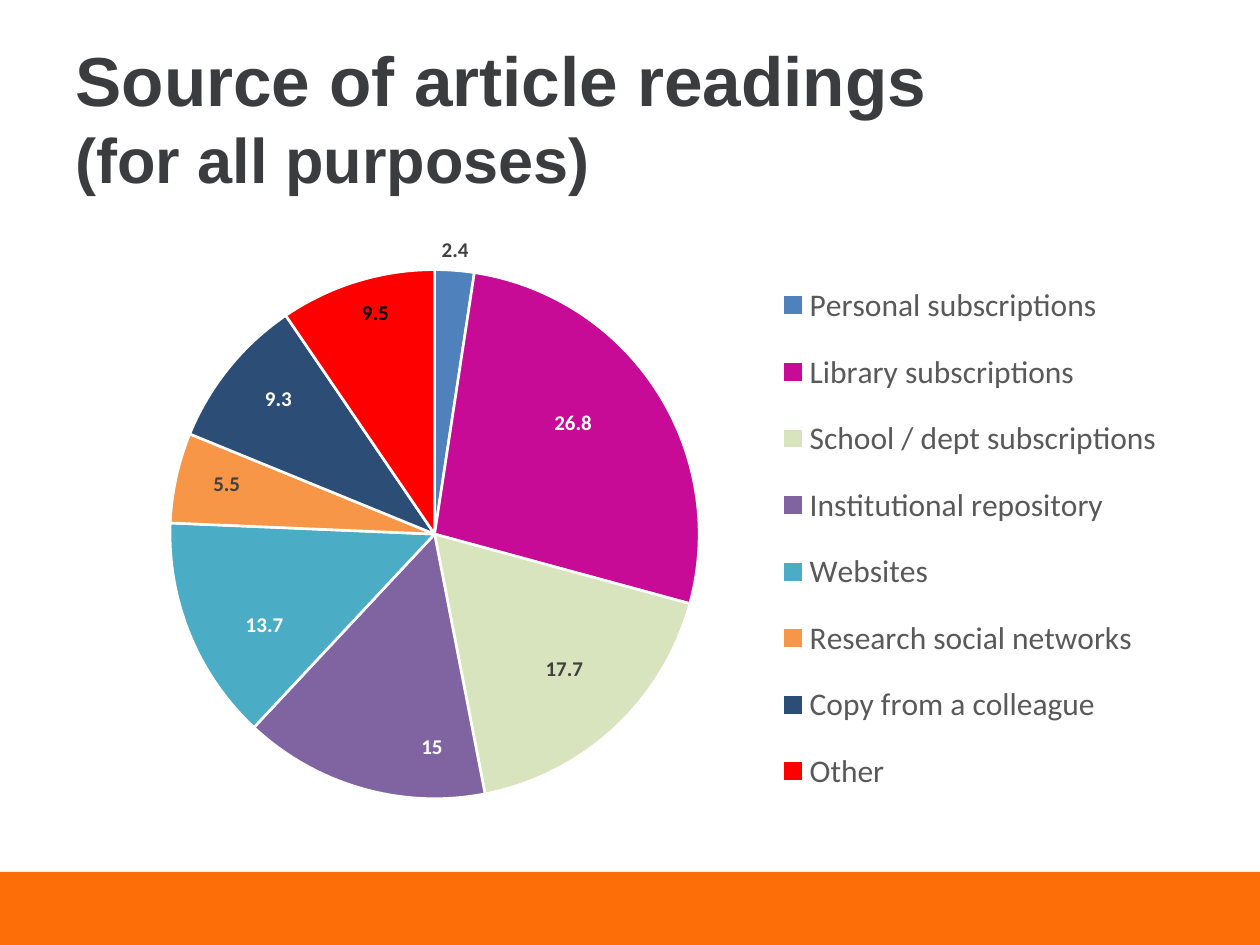
from itertools import accumulate
from math import cos, pi, sin

from lxml import etree
from pptx import Presentation
from pptx.chart.data import CategoryChartData
from pptx.dml.color import RGBColor
from pptx.enum.chart import XL_CHART_TYPE, XL_LABEL_POSITION, XL_LEGEND_POSITION
from pptx.enum.shapes import MSO_SHAPE
from pptx.enum.text import MSO_ANCHOR, PP_ALIGN
from pptx.oxml.ns import qn
from pptx.util import Inches, Pt

PIE = XL_CHART_TYPE.PIE
CENTER, OUTSIDE = XL_LABEL_POSITION.CENTER, XL_LABEL_POSITION.OUTSIDE_END
LEGEND_RIGHT = XL_LEGEND_POSITION.RIGHT
RECTANGLE = MSO_SHAPE.RECTANGLE
LEFT, MIDDLE = PP_ALIGN.LEFT, MSO_ANCHOR.MIDDLE

THEME = {
    "band": "FD6D08",
    "edge": "FFFFFF",
    "title": {"name": "Arial", "size": 39.6, "bold": True, "color": "3B3C3E"},
    "subtitle": {"name": "Arial", "size": 36, "bold": True, "color": "3B3C3E"},
    "chart": {"name": "Calibri", "size": 10, "color": "000000"},
    "legend": {"name": "Calibri", "size": 18, "color": "595959"},
    "label": {"name": "Calibri", "size": 12, "bold": True, "color": "404040"},
}
DARK, WHITE, BLACK = "404040", "FFFFFF", "000000"

# Category, value, slice colour, label colour, label place from the pie centre
SOURCES = [
    ("Personal subscriptions", 2.4, "4F81BD", DARK, None),
    ("Library subscriptions", 26.8, "C70B96", WHITE, (1.1, -0.88)),
    ("School / dept subscriptions", 17.7, "D7E4BD", DARK, (1.03, 1.07)),
    ("Institutional repository", 15, "8064A2", WHITE, (-0.02, 1.69)),
    ("Websites", 13.7, "4BACC6", WHITE, (-1.35, 0.72)),
    ("Research social networks", 5.5, "F79646", DARK, (-1.65, -0.4)),
    ("Copy from a colleague", 9.3, "2C4D75", WHITE, (-1.24, -1.07)),
    ("Other", 9.5, "FF0000", BLACK, (-0.47, -1.75)),
]
CHART_W, CHART_H = 9, 4.95
RADIUS = 2.1


def set_font(font, style):
    for key, value in style.items():
        if key == "color":
            font.color.rgb = RGBColor.from_string(value)
        else:
            setattr(font, key, Pt(value) if key == "size" else value)


def set_fill(fill, color):
    fill.solid()
    fill.fore_color.rgb = RGBColor.from_string(color)


def set_layout(parent, after, **values):
    """Give a chart part a manual layout in fractions of the chart."""
    for old in parent.findall(qn("c:layout")):
        parent.remove(old)
    layout = etree.Element(qn("c:layout"))
    manual = etree.SubElement(layout, qn("c:manualLayout"))
    for tag, value in values.items():
        text = value if isinstance(value, str) else f"{value:.4f}"
        etree.SubElement(manual, qn(f"c:{tag}")).set("val", text)
    if after is None:
        parent.insert(0, layout)
    else:
        after.addnext(layout)


def add_band(slide):
    sp = slide.shapes.add_shape(RECTANGLE, 0, Inches(6.92), Inches(10), Inches(0.58))
    sp.shadow.inherit = False
    set_fill(sp.fill, THEME["band"])
    sp.line.fill.background()


def add_title(slide, title, subtitle):
    sp = slide.shapes.title
    sp.left, sp.top = Inches(0.5), Inches(0.3)
    sp.width, sp.height = Inches(9), Inches(1.25)
    tf = sp.text_frame
    tf.vertical_anchor = MIDDLE
    p = tf.paragraphs[0]
    p.alignment = LEFT
    r = p.add_run()
    r.text = title
    set_font(r.font, THEME["title"])
    p.add_line_break()
    r = p.add_run()
    r.text = subtitle
    set_font(r.font, THEME["subtitle"])


def style_slices(series):
    values = [row[1] for row in SOURCES]
    total = sum(values)
    for i, (end, row) in enumerate(zip(accumulate(values), SOURCES)):
        _, value, color, label_color, place = row
        point = series.points[i]
        set_fill(point.format.fill, color)
        point.format.line.color.rgb = RGBColor.from_string(THEME["edge"])
        point.format.line.width = Pt(1.5)

        label = point.data_label
        set_font(label.font, {**THEME["label"], "color": label_color})
        label.position = CENTER if place else OUTSIDE
        if place:
            # Shift from the default spot, half a radius out along the slice
            angle = 2 * pi * (end - value / 2) / total
            dx = place[0] - RADIUS / 2 * sin(angle)
            dy = place[1] + RADIUS / 2 * cos(angle)
            d_lbl = next(e for e in series.points[0].data_label.font._element.iterancestors(qn("c:dLbls"))
                         ).findall(qn("c:dLbl"))[i]
            set_layout(d_lbl, d_lbl.find(qn("c:idx")), x=dx / CHART_W, y=dy / CHART_H)


def add_pie(slide):
    data = CategoryChartData()
    data.categories = [row[0] for row in SOURCES]
    data.add_series("Series 1", [row[1] for row in SOURCES])
    chart = slide.shapes.add_chart(PIE, Inches(0.5), Inches(1.75), Inches(CHART_W),
                                   Inches(CHART_H), data).chart
    chart.has_title = False
    set_font(chart.font, THEME["chart"])

    # Plot
    plot = chart.plots[0]
    plot.vary_by_categories = True
    plot_area = chart._chartSpace.find(".//" + qn("c:plotArea"))
    set_layout(plot_area, None, layoutTarget="inner", xMode="edge", yMode="edge",
               x=0.85 / CHART_W, y=0.39 / CHART_H,
               w=2 * RADIUS / CHART_W, h=2 * RADIUS / CHART_H)

    # Labels
    series = plot.series[0]
    labels = series.data_labels
    labels.show_value = True
    labels.position = OUTSIDE
    set_font(labels.font, THEME["label"])
    style_slices(series)

    # Legend
    chart.has_legend = True
    legend = chart.legend
    legend.position = LEGEND_RIGHT
    legend.include_in_layout = False
    set_font(legend.font, THEME["legend"])
    set_layout(legend._element, legend._element.find(qn("c:legendPos")),
               xMode="edge", yMode="edge", x=0.62, y=0.06, w=0.36, h=0.9)


def main():
    prs = Presentation()
    prs.slide_width, prs.slide_height = Inches(10), Inches(7.5)
    slide = prs.slides.add_slide(prs.slide_layouts[5])
    add_band(slide)
    add_title(slide, "Source of article readings ", "(for all purposes)")
    add_pie(slide)
    prs.save("out.pptx")


if __name__ == "__main__":
    main()
